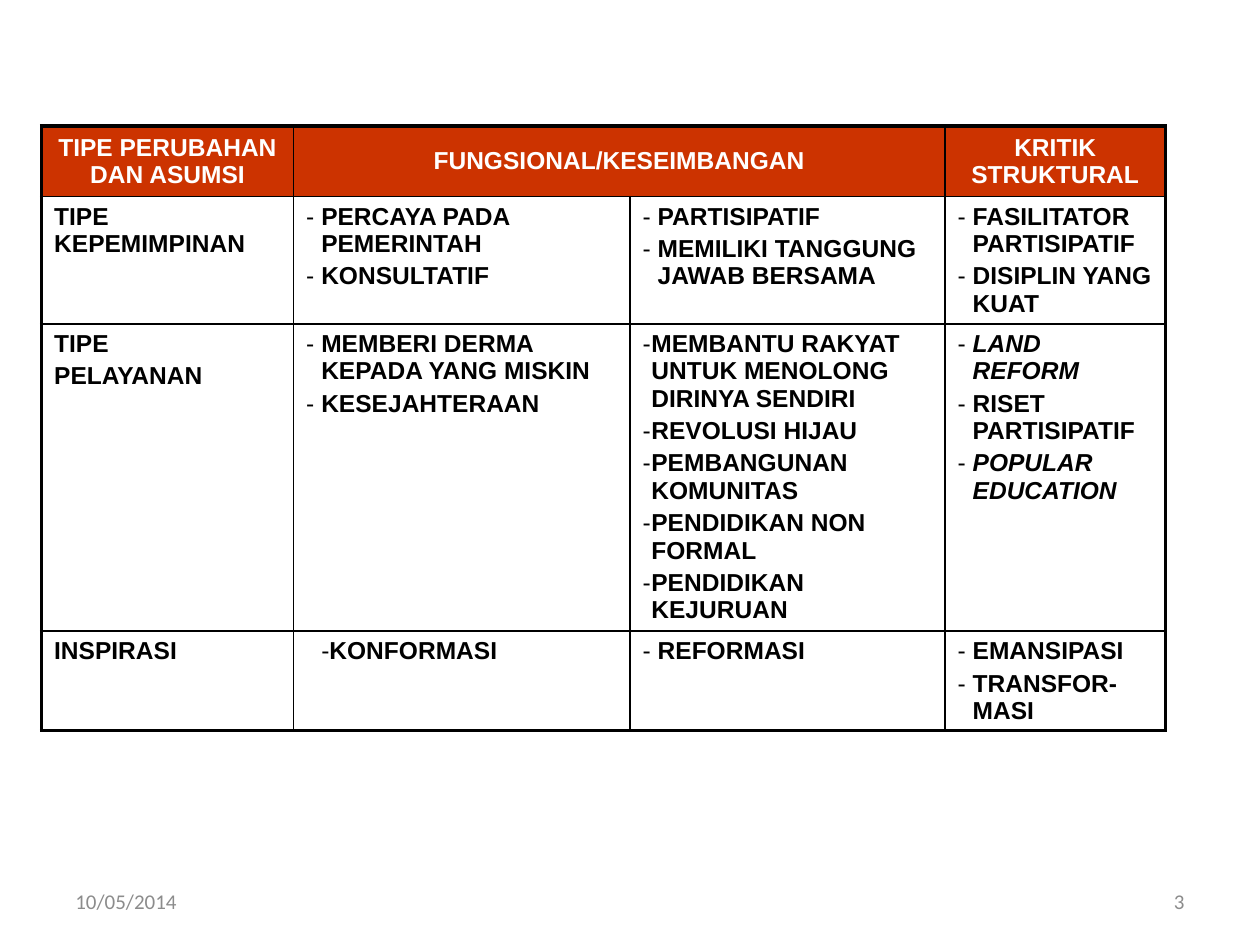
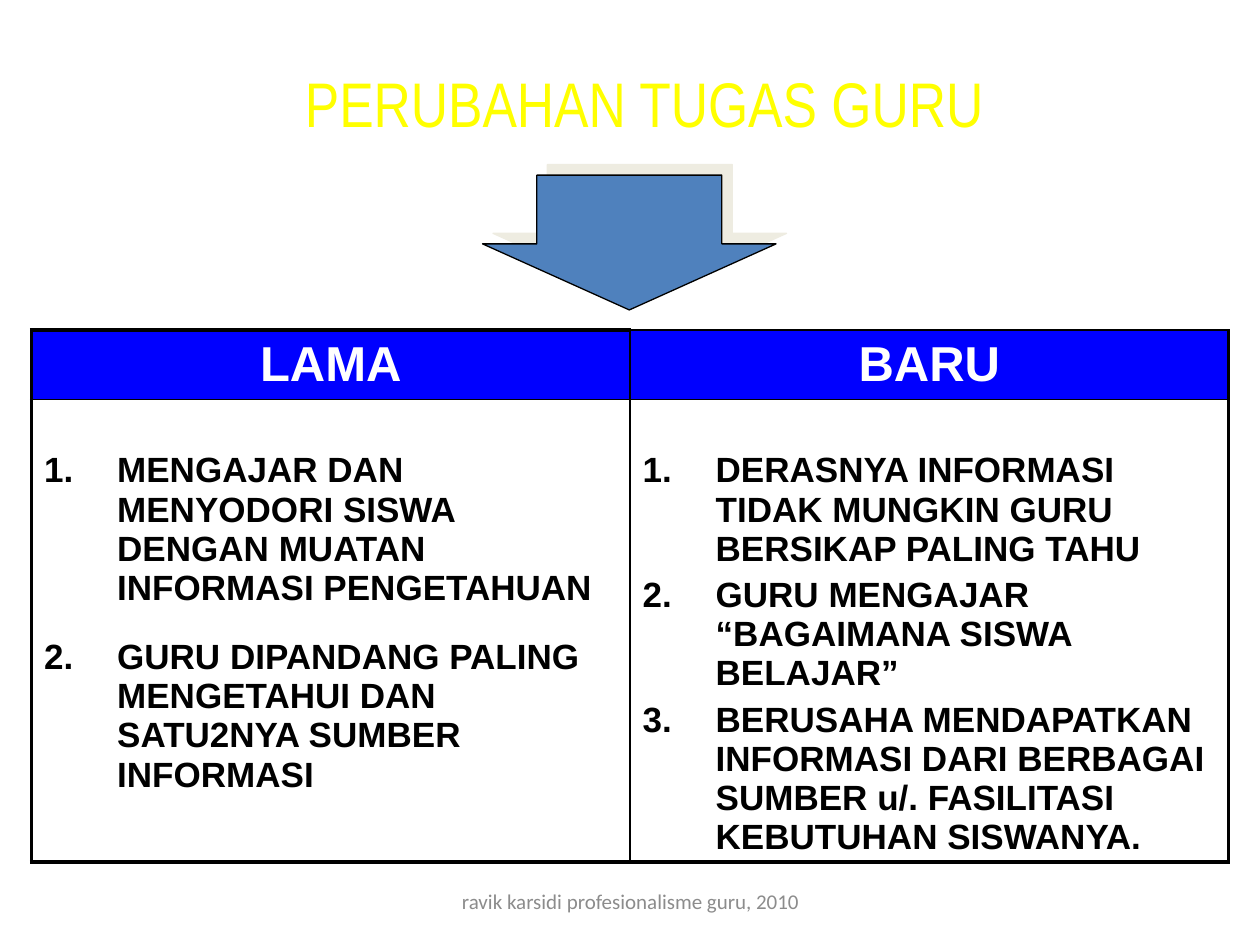
from lxml import etree
from pptx import Presentation, util as u
from pptx.dml.color import RGBColor
from pptx.enum import shapes, text
from pptx.oxml.ns import qn

BLACK = RGBColor(0x00, 0x00, 0x00)
WHITE = RGBColor(0xFF, 0xFF, 0xFF)
GREY = RGBColor(0x8C, 0x8C, 0x8C)
RED = RGBColor(0xCC, 0x33, 0x00)
BLUE = RGBColor(0x00, 0x00, 0xFF)
STEEL = RGBColor(0x4F, 0x81, 0xBD)
IVORY = RGBColor(0xEE, 0xEC, 0xE1)
YELLOW = RGBColor(0xFF, 0xFF, 0x00)

WIDTH, HEIGHT = 10, 7.5
THICK, THIN = 2.25, 1
LINE_PITCH, PARAGRAPH_GAP = 1.12, 0.2  # shares of the text size
FOOTER_TOP, FOOTER_HEIGHT = 6.95, 0.4
ALIGN = text.PP_ALIGN

prs = Presentation()
prs.slide_width, prs.slide_height = u.Inches(WIDTH), u.Inches(HEIGHT)
blank = prs.slide_layouts[6]


def add_label(slide, words, box, size, font, colour, align):
    frame = slide.shapes.add_textbox(*map(u.Inches, box)).text_frame
    frame.word_wrap = True
    frame.vertical_anchor = text.MSO_ANCHOR.MIDDLE
    frame.text = words
    line = frame.paragraphs[0]
    line.alignment = align
    style = line.runs[0].font
    style.size, style.name, style.color.rgb = u.Pt(size), font, colour


def add_grid(slide, corner, widths, heights, content, header_fill, header_size, body_size):
    """Table with a thick frame, thin inner rules and a filled header row."""
    table = slide.shapes.add_table(
        len(heights), len(widths), *map(u.Inches, (*corner, sum(widths), sum(heights)))).table
    table.first_row = table.horz_banding = False
    for column, width in zip(table.columns, widths):
        column.width = u.Inches(width)
    for row, height in zip(table.rows, heights):
        row.height = u.Inches(height)
    last_row, last_col = len(heights) - 1, len(widths) - 1
    for r, row in enumerate(content):
        for c, lines in enumerate(row):
            cell = table.cell(r, c)
            on_frame = {"lnL": c == 0, "lnR": c == last_col, "lnT": r == 0, "lnB": r == last_row}
            for edge, outer in on_frame.items():
                rule = etree.SubElement(cell._tc.get_or_add_tcPr(), qn(f"a:{edge}"),
                                        w=str(u.Pt(THICK if outer else THIN)))
                ink = etree.SubElement(rule, qn("a:solidFill"))
                etree.SubElement(ink, qn("a:srgbClr"), val=str(BLACK))
            header = r == 0
            size = header_size if header else body_size
            if header:
                cell.fill.solid()
                cell.fill.fore_color.rgb = header_fill
                cell.vertical_anchor = text.MSO_ANCHOR.MIDDLE
            else:
                cell.fill.background()
                cell.margin_bottom = 0
            cell.text_frame.text = "\n".join(lines)
            for n, line in enumerate(cell.text_frame.paragraphs):
                line.alignment = ALIGN.CENTER if header else ALIGN.LEFT
                line.line_spacing = u.Pt(LINE_PITCH * size)
                line.space_before = u.Pt(PARAGRAPH_GAP * size if n else 0)
                for run in line.runs:
                    run.font.size, run.font.name, run.font.bold = u.Pt(size), "Arial", True
                    run.font.color.rgb = WHITE if header else BLACK
    return table


# Types of change
change = prs.slides.add_slide(blank)
footer_width = 2.33
add_label(change, "10/05/2014", (0.5, FOOTER_TOP, footer_width, FOOTER_HEIGHT),
          12, "Calibri", GREY, ALIGN.LEFT)
add_label(change, "3", (WIDTH - 0.5 - footer_width, FOOTER_TOP, footer_width, FOOTER_HEIGHT),
          12, "Calibri", GREY, ALIGN.RIGHT)

change_rows = [
    [["TIPE PERUBAHAN DAN ASUMSI"], ["FUNGSIONAL/KESEIMBANGAN"], [], ["KRITIK STRUKTURAL"]],
    [["TIPE KEPEMIMPINAN"],
     ["PERCAYA PADA PEMERINTAH", "KONSULTATIF"],
     ["PARTISIPATIF", "MEMILIKI TANGGUNG JAWAB BERSAMA"],
     ["FASILITATOR PARTISIPATIF", "DISIPLIN YANG KUAT"]],
    [["TIPE", "PELAYANAN"],
     ["MEMBERI DERMA KEPADA YANG MISKIN", "KESEJAHTERAAN"],
     ["MEMBANTU RAKYAT UNTUK MENOLONG DIRINYA SENDIRI", "REVOLUSI HIJAU",
      "PEMBANGUNAN KOMUNITAS", "PENDIDIKAN NON FORMAL", "PENDIDIKAN KEJURUAN"],
     ["LAND REFORM", "RISET PARTISIPATIF", "POPULAR EDUCATION"]],
    [["INSPIRASI"], ["KONFORMASI"], ["REFORMASI"], ["EMANSIPASI", "TRANSFOR-MASI"]],
]
change_table = add_grid(change, (0.33, 1), (2, 2.67, 2.5, 1.75), (0.56, 1.01, 2.44, 0.79),
                        change_rows, RED, 14, 14)
change_table.cell(0, 1).merge(change_table.cell(0, 2))

foreign_terms = {"LAND REFORM", "POPULAR EDUCATION"}
special_indents = {(2, 2): (0.07, -0.07), (3, 1): (0.12, 0)}
for r in range(1, 4):
    for c in range(1, 4):
        margin, hang = special_indents.get((r, c), (0.12, -0.12))
        for line in change_table.cell(r, c).text_frame.paragraphs:
            props = line._p.get_or_add_pPr()
            props.set("marL", str(u.Inches(margin)))
            props.set("indent", str(u.Inches(hang)))
            etree.SubElement(props, qn("a:buFont"), typeface="Arial")
            etree.SubElement(props, qn("a:buChar"), char="-")
            line.runs[0].font.italic = line.text in foreign_terms

# Teacher's duties
duties = prs.slides.add_slide(blank)
add_label(duties, "ravik karsidi profesionalisme guru, 2010",
          (3.42, FOOTER_TOP, 3.17, FOOTER_HEIGHT), 12, "Calibri", GREY, ALIGN.CENTER)

duty_rows = [
    [["LAMA"], ["BARU"]],
    [["MENGAJAR DAN MENYODORI SISWA DENGAN MUATAN INFORMASI PENGETAHUAN",
      "GURU DIPANDANG PALING MENGETAHUI DAN SATU2NYA SUMBER INFORMASI"],
     ["DERASNYA INFORMASI TIDAK MUNGKIN GURU BERSIKAP PALING TAHU",
      "GURU MENGAJAR “BAGAIMANA SISWA BELAJAR”",
      "BERUSAHA MENDAPATKAN INFORMASI DARI BERBAGAI SUMBER u/. FASILITASI "
      "KEBUTUHAN SISWANYA."]],
]
duty_table = add_grid(duties, (0.25, 2.62), (4.75, 4.75), (0.55, 3.67), duty_rows, BLUE, 28, 20)
duty_table.cell(0, 1)._tc.tcPr.find(qn("a:lnT")).set("w", str(u.Pt(THIN)))
for c in range(2):
    duty_cell = duty_table.cell(1, c)
    duty_cell.margin_top = u.Inches(0.41)
    for line in duty_cell.text_frame.paragraphs:
        props = line._p.get_or_add_pPr()
        props.set("marL", str(u.Inches(0.58)))
        props.set("indent", str(u.Inches(-0.58)))
        bullet_ink = etree.SubElement(props, qn("a:buClr"))
        etree.SubElement(bullet_ink, qn("a:srgbClr"), val=str(BLACK))
        etree.SubElement(props, qn("a:buFont"), typeface="Arial")
        etree.SubElement(props, qn("a:buAutoNum"), type="arabicPeriod")
old_duties = duty_table.cell(1, 0)
old_duties.margin_right = u.Inches(0.2)
old_duties.text_frame.paragraphs[1].space_before = u.Pt(17)

arrow = duties.shapes.add_shape(shapes.MSO_SHAPE.DOWN_ARROW,
                                *map(u.Inches, (3.83, 1.39, 2.33, 1.07)))
arrow.adjustments[0], arrow.adjustments[1] = 0.63, 0.49
arrow.fill.solid()
arrow.fill.fore_color.rgb = STEEL
arrow.line.color.rgb, arrow.line.width = BLACK, u.Pt(0.75)
arrow.shadow.inherit = False
shade = etree.SubElement(arrow._element.spPr.find(qn("a:effectLst")), qn("a:outerShdw"),
                         dist=str(u.Pt(8.5)), dir=str(315 * 60000), algn="ctr", rotWithShape="0")
etree.SubElement(shade, qn("a:srgbClr"), val=str(IVORY))

add_label(duties, "PERUBAHAN TUGAS GURU", (2.24, 0.5, 5.75, 0.62),
          36, "Arial Narrow", YELLOW, ALIGN.CENTER)

prs.save("out.pptx")
